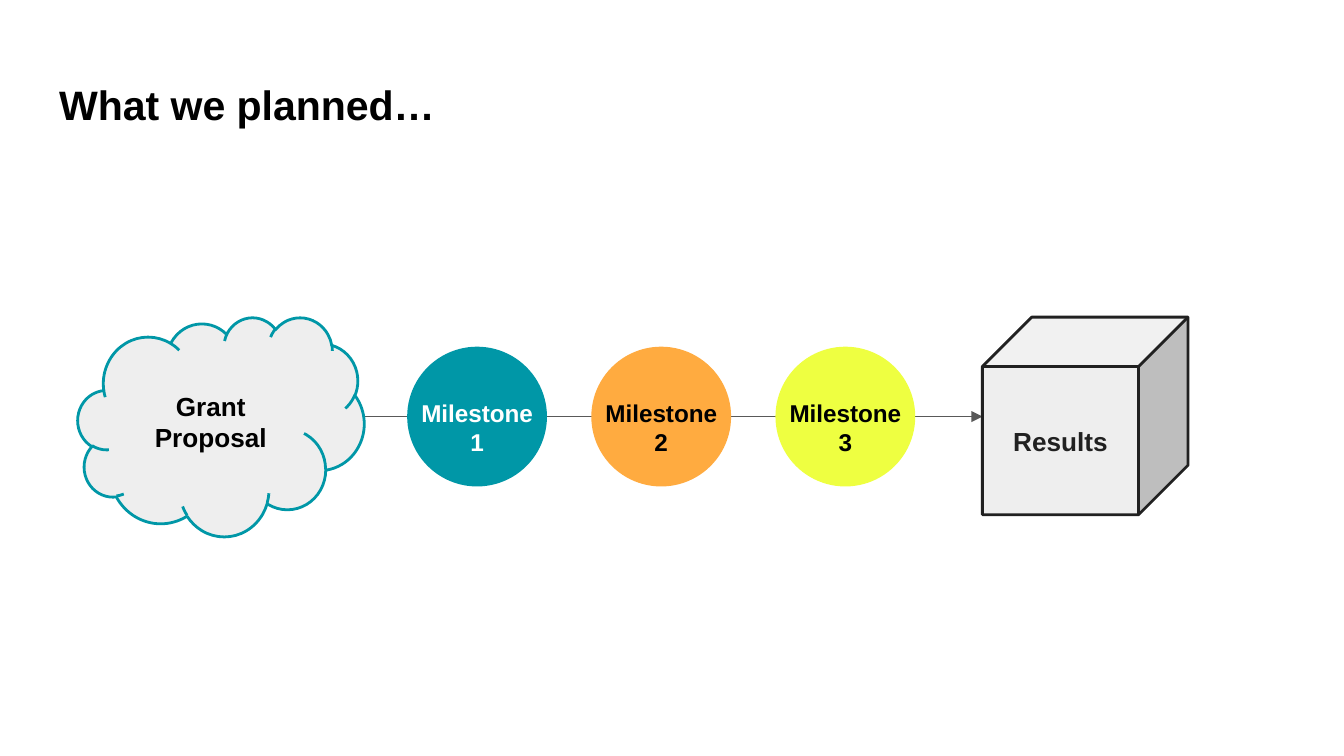
import pptx
import pptx.dml.color
import pptx.enum.dml
import pptx.enum.shapes
import pptx.enum.text
import pptx.oxml.ns
import pptx.util
from lxml import etree

Inches = pptx.util.Inches
SHAPES = pptx.enum.shapes.MSO_SHAPE
ALIGN = pptx.enum.text.PP_ALIGN
ANCHOR = pptx.enum.text.MSO_ANCHOR
MILESTONES = [("0097A7", "FFFFFF"), ("FFAB40", "000000"), ("EEFF41", "000000")]


def color(hex_string):
    """Turn a hex string into a colour."""
    return pptx.dml.color.RGBColor.from_string(hex_string)


def write_text(shape, text, size=14, ink="000000", align=ALIGN.CENTER, anchor=ANCHOR.MIDDLE):
    """Write bold text into a shape with equal insets."""
    frame = shape.text_frame
    frame.word_wrap = True
    frame.auto_size = pptx.enum.text.MSO_AUTO_SIZE.NONE
    frame.vertical_anchor = anchor
    frame.margin_left = frame.margin_right = Inches(0.1)
    frame.margin_top = frame.margin_bottom = Inches(0.1)
    para = frame.paragraphs[0]
    para.alignment = align
    span = para.add_run()
    span.text = text
    span.font.name = "Arial"
    span.font.size = pptx.util.Pt(size)
    span.font.bold = True
    span.font.color.rgb = color(ink)


def add_figure(page, kind, box, fill, line=None):
    """Add a filled preset shape, outlined when a line colour is given."""
    figure = page.shapes.add_shape(kind, *map(Inches, box))
    figure.shadow.inherit = False
    figure.fill.solid()
    figure.fill.fore_color.rgb = color(fill)
    if line:
        figure.line.color.rgb = color(line)
        figure.line.width = pptx.util.Pt(1.5)
    else:
        figure.line.fill.background()
    return figure


def add_title(page, box, text):
    """Place and format the title placeholder."""
    title = page.shapes.title
    title.left, title.top, title.width, title.height = map(Inches, box)
    write_text(title, text, size=22, align=ALIGN.LEFT, anchor=ANCHOR.TOP)


def add_arrow(page, start, end, y):
    """Draw a horizontal line that ends in an arrowhead."""
    arrow = page.shapes.add_connector(
        pptx.enum.shapes.MSO_CONNECTOR.STRAIGHT, Inches(start), Inches(y), Inches(end), Inches(y))
    arrow.line.color.rgb = color("595959")
    arrow.line.width = pptx.util.Pt(1)
    outline = arrow.line._get_or_add_ln()
    etree.SubElement(outline, pptx.oxml.ns.qn("a:tailEnd"), type="triangle")
    etree.SubElement(outline.getparent(), pptx.oxml.ns.qn("a:effectLst"))


def add_milestone(page, box, text, fill, ink):
    """Draw a circle with its label slightly below the centre."""
    left, top, width, height = box
    add_figure(page, SHAPES.OVAL, box, fill)
    label = page.shapes.add_textbox(*map(Inches, (left, top + 0.28, width, 0.64)))
    write_text(label, text, size=13, ink=ink, anchor=ANCHOR.TOP)


def add_process(page, box):
    """Draw the path from proposal through milestones to results."""
    left, top, width, height = box
    diameter, step, cube_width = 1.04, 1.37, 1.53
    middle = top + 0.74
    cube_left = left + width - cube_width
    add_arrow(page, left + 1.8, cube_left, middle)
    cloud = add_figure(page, SHAPES.CLOUD, (left, top, 2.13, height), "EEEEEE", "0097A7")
    write_text(cloud, "Grant Proposal")
    for index, (fill, ink) in enumerate(MILESTONES):
        circle = (left + 2.45 + index * step, middle - diameter / 2, diameter, diameter)
        add_milestone(page, circle, f"Milestone {index + 1}", fill, ink)
    cube = add_figure(page, SHAPES.CUBE, (cube_left, top, cube_width, 1.47), "EEEEEE", "212121")
    write_text(cube, "Results", ink="212121")


def main():
    """Build the widescreen deck and save it."""
    deck = pptx.Presentation()
    deck.slide_width = Inches(10)
    deck.slide_height = deck.slide_width * 9 // 16
    page = deck.slides.add_slide(deck.slide_layouts[5])
    add_title(page, (0.34, 0.49, 9.32, 0.63), "What we planned…")
    add_process(page, (0.58, 2.36, 8.26, 1.63))
    deck.save("out.pptx")


if __name__ == "__main__":
    main()
